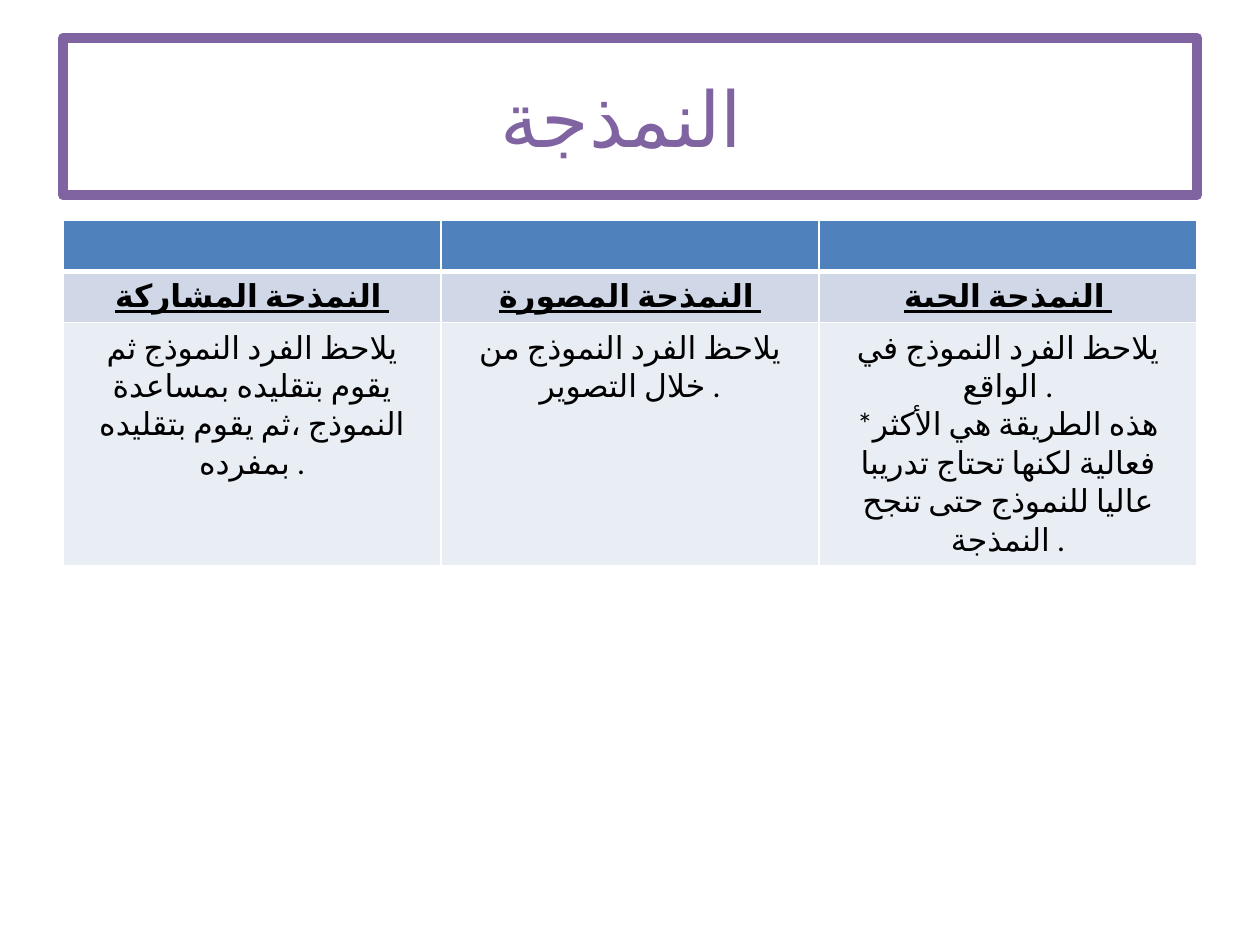
from lxml import etree
from pptx import Presentation
from pptx.dml.color import RGBColor
from pptx.enum import lang, text
from pptx.oxml import ns
from pptx.util import Pt

PURPLE = RGBColor(0x80, 0x64, 0xA2)
BLUE = RGBColor(0x4F, 0x81, 0xBD)
BLUE_GREY = RGBColor(0xD0, 0xD8, 0xE8)
PALE_BLUE = RGBColor(0xE9, 0xED, 0xF4)
BLACK = RGBColor(0, 0, 0)
WHITE = RGBColor(0xFF, 0xFF, 0xFF)

FONT = "Calibri"
MODELING_TYPES = [
    ("النمذجة المشاركة ",
     ["يلاحظ الفرد النموذج ثم يقوم بتقليده بمساعدة النموذج ،ثم يقوم بتقليده بمفرده ."]),
    ("النمذجة المصورة ",
     ["يلاحظ الفرد النموذج من خلال التصوير ."]),
    ("النمذجة الحية ",
     ["يلاحظ الفرد النموذج في الواقع .",
      "*هذه الطريقة هي الأكثر فعالية لكنها تحتاج تدريبا عاليا للنموذج حتى تنجح النمذجة ."]),
]


def write_text(frame, lines, size=18, color=BLACK, bold=False, underline=False):
    for index, line in enumerate(lines):
        paragraph = frame.add_paragraph() if index else frame.paragraphs[0]
        paragraph.alignment = text.PP_ALIGN.CENTER
        run = paragraph.add_run()
        run.text = line
        run.font.name = FONT
        run.font.size = Pt(size)
        run.font.color.rgb = color
        run.font.bold = bold
        run.font.underline = underline
        run.font.language_id = lang.MSO_LANGUAGE_ID.ARABIC
        properties = run.font._element
        etree.SubElement(properties, ns.qn("a:cs"), typeface=FONT)


def set_border(cell, side, color, width):
    properties = cell._tc.get_or_add_tcPr()
    line = etree.Element(ns.qn("a:" + side), w=str(Pt(width)))
    fill = etree.SubElement(line, ns.qn("a:solidFill"))
    etree.SubElement(fill, ns.qn("a:srgbClr"), val=str(color))
    properties.insert(0, line)


def place_title(slide, left, top, width, height):
    title = slide.shapes.title
    title.left, title.top = Pt(left), Pt(top)
    title.width, title.height = Pt(width), Pt(height)
    title.line.color.rgb = PURPLE
    title.line.width = Pt(5.75)
    title.text_frame.vertical_anchor = text.MSO_ANCHOR.MIDDLE
    write_text(title.text_frame, ["النمذجة "], size=44, color=PURPLE)


def place_table(slide, left, top, width, row_height):
    row_fills = [BLUE, BLUE_GREY, PALE_BLUE]
    row_count = len(row_fills)
    table = slide.shapes.add_table(
        row_count, len(MODELING_TYPES),
        Pt(left), Pt(top), Pt(width), Pt(row_height * row_count)).table
    for row, fill in zip(table.rows, row_fills):
        row.height = Pt(row_height)
        for cell in row.cells:
            cell.fill.solid()
            cell.fill.fore_color.rgb = fill
    for column, (name, description) in enumerate(MODELING_TYPES):
        set_border(table.cell(0, column), "lnB", WHITE, 3)
        write_text(table.cell(1, column).text_frame, [name], bold=True, underline=True)
        write_text(table.cell(2, column).text_frame, description)


def main():
    presentation = Presentation()
    presentation.slide_width, presentation.slide_height = Pt(720), Pt(540)
    slide = presentation.slides.add_slide(presentation.slide_layouts[5])
    place_title(slide, left=36, top=21.6, width=648, height=90)
    place_table(slide, left=36, top=126, width=648, row_height=29.2)
    presentation.save("out.pptx")


if __name__ == "__main__":
    main()
